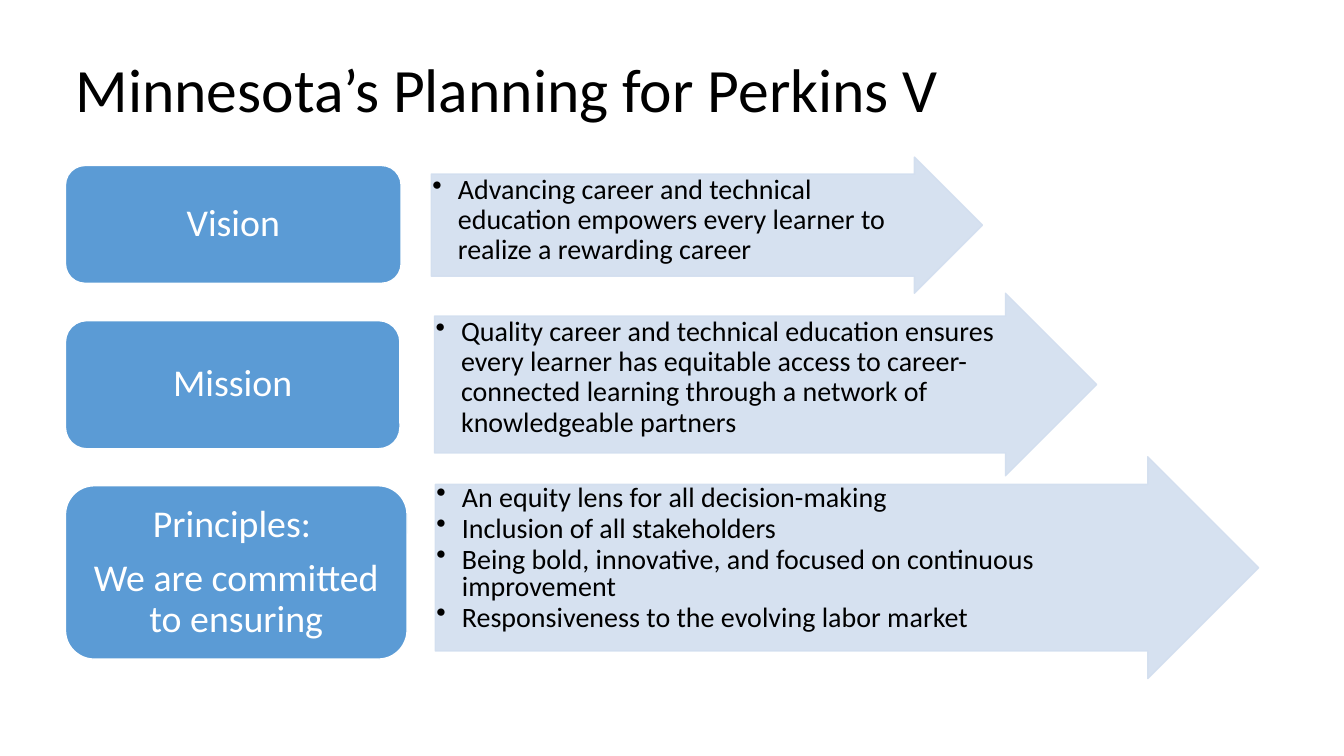
from lxml import etree
from pptx import Presentation
from pptx.dml.color import RGBColor
from pptx.enum.shapes import MSO_SHAPE
from pptx.enum.text import MSO_ANCHOR, PP_ALIGN
from pptx.oxml.ns import qn
from pptx.util import Cm, Pt

ARROW, ROUNDED = MSO_SHAPE.RIGHT_ARROW, MSO_SHAPE.ROUNDED_RECTANGLE
TOP, MIDDLE = MSO_ANCHOR.TOP, MSO_ANCHOR.MIDDLE
LEFT, CENTER = PP_ALIGN.LEFT, PP_ALIGN.CENTER
FONT = "Calibri"
BLACK, WHITE, BLUE, PALE = "000000", "FFFFFF", "5B9BD5", "D2DEEF"

TITLE = "Minnesota’s Planning for Perkins V"
TITLE_BOX = (1.65, 0.48, 29.21, 3.68)

# Each row: label box, label lines, arrow box, bullet lines, bullet line spacing
ROWS = [
    ((1.65, 4.17, 8.46, 2.97), ["Vision"],
     (10.87, 3.96, 13.89, 3.43),
     ["Advancing career and technical education empowers every learner "
      "to realize a rewarding career"], 0.9),
    ((1.65, 8.08, 8.43, 3.23), ["Mission"],
     (10.95, 7.39, 16.69, 4.6),
     ["Quality career and technical education ensures every learner has "
      "equitable access to career-connected learning through a network of "
      "knowledgeable partners"], 0.9),
    ((1.65, 12.24, 8.61, 4.37),
     ["Principles: ", "We are committed to ensuring"],
     (10.97, 11.51, 20.75, 5.59),
     ["An equity lens for all decision-making",
      "Inclusion of all stakeholders",
      "Being bold, innovative, and focused on continuous improvement",
      "Responsiveness to the evolving labor market"], 0.8),
]


def rgb(color):
    return RGBColor.from_string(color)


def set_all(obj, values):
    for name, value in values.items():
        setattr(obj, name, value)


def place(s, box):
    set_all(s, dict(zip(("left", "top", "width", "height"), map(Cm, box))))


def write(tf, lines, size, color, para, frame):
    """Fill a text frame with one paragraph per line."""
    set_all(tf, {"word_wrap": True, **frame})
    for i, line in enumerate(lines):
        p = tf.add_paragraph() if i else tf.paragraphs[0]
        set_all(p, para)
        r = p.add_run()
        r.text = line
        set_all(r.font, {"size": Pt(size), "name": FONT})
        r.font.color.rgb = rgb(color)


def add_block(slide, kind, box, fill, line):
    s = slide.shapes.add_shape(kind, *map(Cm, box))
    s.shadow.inherit = False
    s.fill.solid()
    s.fill.fore_color.rgb = rgb(fill)
    s.line.color.rgb = rgb(line)
    s.line.width = Pt(1)
    return s


def make_translucent(s, percent):
    for color in s._element.spPr.iter(qn("a:srgbClr")):
        etree.SubElement(color, qn("a:alpha"), val=str(percent * 1000))


def add_bullet(p, indent):
    pPr = p._p.get_or_add_pPr()
    pPr.set("marL", str(indent))
    pPr.set("indent", str(-indent))
    etree.SubElement(pPr, qn("a:buChar"), char="•")


def add_title(slide, box):
    s = slide.shapes.title
    place(s, box)
    write(s.text_frame, [TITLE], 44, BLACK,
          {"alignment": LEFT, "line_spacing": 0.9},
          {"vertical_anchor": MIDDLE})


def add_arrow(slide, box, lines, spacing):
    s = add_block(slide, ARROW, box, PALE, PALE)
    set_all(s.adjustments, {})
    s.adjustments[0] = 0.75
    make_translucent(s, 90)
    margins = ("margin_left", "margin_top", "margin_right", "margin_bottom")
    write(s.text_frame, lines, 20, BLACK,
          {"alignment": LEFT, "level": 1, "line_spacing": spacing,
           "space_after": Pt(3)},
          {"vertical_anchor": TOP, **dict.fromkeys(margins, Cm(0.03))})
    for p in s.text_frame.paragraphs:
        add_bullet(p, Cm(0.64))


def add_label(slide, box, lines):
    s = add_block(slide, ROUNDED, box, BLUE, WHITE)
    write(s.text_frame, lines, 27, WHITE,
          {"alignment": CENTER, "line_spacing": 0.9, "space_after": Pt(9.5)},
          {"vertical_anchor": MIDDLE,
           "margin_left": Cm(0.28), "margin_right": Cm(0.28),
           "margin_top": Cm(0.15), "margin_bottom": Cm(0.15)})


def main():
    prs = Presentation()
    set_all(prs, {"slide_width": Cm(33.87), "slide_height": Cm(19.05)})
    slide = prs.slides.add_slide(prs.slide_layouts.get_by_name("Title Only"))
    add_title(slide, TITLE_BOX)
    for label_box, label, arrow_box, bullets, spacing in ROWS:
        add_arrow(slide, arrow_box, bullets, spacing)
        add_label(slide, label_box, label)
    prs.save("out.pptx")


if __name__ == "__main__":
    main()
